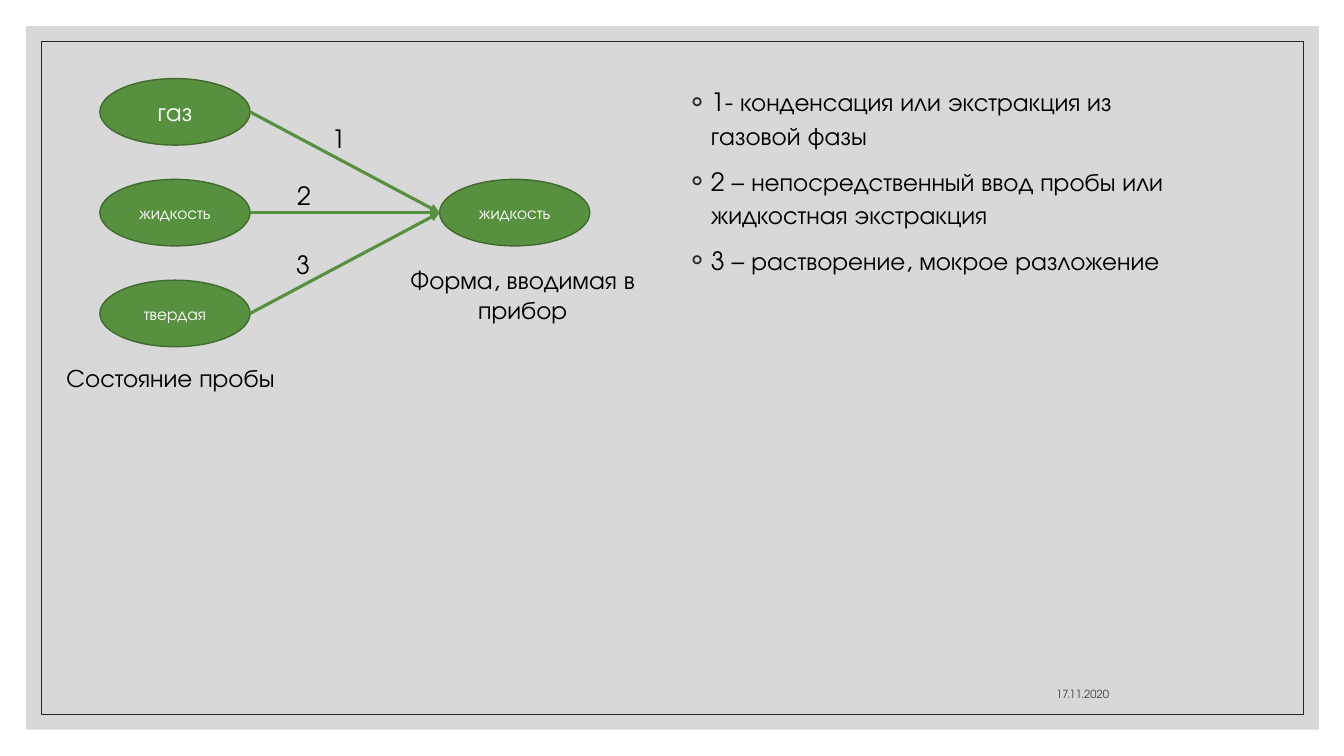
from dataclasses import dataclass

from lxml import etree
from pptx import Presentation
from pptx.dml.color import RGBColor
from pptx.enum.shapes import MSO_CONNECTOR as Connector, MSO_SHAPE as Preset
from pptx.enum.text import MSO_ANCHOR as Anchor, MSO_AUTO_SIZE as AutoSize, PP_ALIGN as Align
from pptx.oxml.ns import qn
from pptx.util import Emu, Pt

FONT = "TeX Gyre Adventor"
GREEN, DARK_GREEN = "57903F", "406B2F"
BLACK, WHITE, CHARCOAL, GREY = "000000", "FFFFFF", "262626", "404040"
OVAL_WIDTH, OVAL_HEIGHT = 149, 66
SAMPLE_LEFT, SAMPLE_TOP, SAMPLE_PITCH = 99, 78, 100
INPUT_LEFT, INPUT_TOP = 436, 178


@dataclass
class State:
    name: str
    left: int
    top: int
    size: int = 12

    @property
    def middle(self) -> int:
        return self.top + OVAL_HEIGHT // 2


@dataclass
class Label:
    text: str
    left: int
    top: int
    width: int = 34
    height: int = 40
    align: Align = Align.LEFT
    size: int = 18
    color: str = BLACK
    anchor: Anchor = Anchor.TOP


def px(value: int) -> Emu:
    """One px is a hundredth of an inch."""
    return Emu(value * 9144)


def rgb(color: str) -> RGBColor:
    return RGBColor.from_string(color)


def write(paragraph, text: str, *, size: int = 18, color: str = BLACK,
          align: Align = Align.LEFT) -> None:
    paragraph.alignment = align
    run = paragraph.add_run()
    run.text = text
    run.font.name = FONT
    run.font.size = Pt(size)
    run.font.color.rgb = rgb(color)


def add_shape(slide, preset: Preset, left: int, top: int, width: int, height: int, *,
              fill: str = "", line: str = "", weight: float = 1):
    shape = slide.shapes.add_shape(preset, px(left), px(top), px(width), px(height))
    shape.shadow.inherit = False
    if fill:
        shape.fill.solid()
        shape.fill.fore_color.rgb = rgb(fill)
    else:
        shape.fill.background()
    if line:
        shape.line.color.rgb = rgb(line)
        shape.line.width = Pt(weight)
    else:
        shape.line.fill.background()
    return shape


def add_state(slide, state: State) -> None:
    shape = add_shape(slide, Preset.OVAL, state.left, state.top, OVAL_WIDTH, OVAL_HEIGHT,
                      fill=GREEN, line=DARK_GREEN)
    shape.text_frame.vertical_anchor = Anchor.MIDDLE
    write(shape.text_frame.paragraphs[0], state.name, size=state.size, color=WHITE,
          align=Align.CENTER)


def add_label(slide, label: Label) -> None:
    box = slide.shapes.add_textbox(px(label.left), px(label.top), px(label.width),
                                   px(label.height))
    box.text_frame.word_wrap = True
    box.text_frame.vertical_anchor = label.anchor
    write(box.text_frame.paragraphs[0], label.text, size=label.size, color=label.color,
          align=label.align)


def add_arrow(slide, source: State, target: State) -> None:
    arrow = slide.shapes.add_connector(
        Connector.STRAIGHT, px(source.left + OVAL_WIDTH), px(source.middle),
        px(target.left), px(target.middle))
    arrow.line.color.rgb = rgb(GREEN)
    arrow.line.width = Pt(2.25)
    etree.SubElement(arrow.line._get_or_add_ln(), qn("a:tailEnd"), type="triangle")
    etree.SubElement(arrow._element.spPr, qn("a:effectLst"))


def add_bullet(paragraph) -> None:
    properties = paragraph._p.get_or_add_pPr()
    properties.set("marL", str(px(20)))
    properties.set("indent", str(-px(20)))
    color = etree.SubElement(properties, qn("a:buClr"))
    etree.SubElement(color, qn("a:srgbClr"), val=CHARCOAL)
    etree.SubElement(properties, qn("a:buFont"), typeface=FONT)
    etree.SubElement(properties, qn("a:buChar"), char="◦")


def fill_list(body, items: list[str]) -> None:
    body.left, body.top, body.width, body.height = px(675), px(78), px(510), px(410)
    frame = body.text_frame
    frame.auto_size = AutoSize.NONE
    for index, item in enumerate(items):
        paragraph = frame.add_paragraph() if index else frame.paragraphs[0]
        write(paragraph, item)
        paragraph.line_spacing = 1.1
        paragraph.space_before = Pt(9)
        add_bullet(paragraph)


SAMPLES = [
    State(name, SAMPLE_LEFT, SAMPLE_TOP + row * SAMPLE_PITCH, size)
    for row, (name, size) in enumerate([("газ", 18), ("жидкость", 12), ("твердая", 12)])
]
INPUT = State("жидкость", INPUT_LEFT, INPUT_TOP)
LABELS = [
    Label("Состояние пробы", 56, 355, 255),
    Label("Форма, вводимая в прибор", 391, 257, 255, 71, Align.CENTER),
    Label("1", 319, 117),
    Label("2", 285, 174),
    Label("3", 284, 242),
    Label("17.11.2020", 794, 660, 316, 40, Align.RIGHT, 8, GREY, Anchor.BOTTOM),
]
METHODS = [
    "1- конденсация или экстракция из газовой фазы",
    "2 – непосредственный ввод пробы или жидкостная экстракция",
    "3 – растворение, мокрое разложение",
]


def main() -> None:
    presentation = Presentation()
    presentation.slide_width, presentation.slide_height = px(1333), px(750)
    slide = presentation.slides.add_slide(presentation.slide_layouts[1])
    title, body = slide.placeholders
    title._element.getparent().remove(title._element)

    # Backdrop and frame, behind the list
    backdrop = add_shape(slide, Preset.RECTANGLE, 26, 26, 1282, 698, fill="BFBFBF")
    backdrop_color = backdrop._element.spPr.find(qn("a:solidFill"))[0]
    etree.SubElement(backdrop_color, qn("a:alpha"), val="60000")
    add_shape(slide, Preset.RECTANGLE, 41, 41, 1252, 668, line=CHARCOAL, weight=0.5)
    slide.shapes._spTree.append(body._element)

    # List of methods
    fill_list(body, METHODS)

    # Diagram
    for state in [*SAMPLES, INPUT]:
        add_state(slide, state)
    for sample in SAMPLES:
        add_arrow(slide, sample, INPUT)

    # Captions, arrow numbers and date
    for label in LABELS:
        add_label(slide, label)

    presentation.save("out.pptx")


if __name__ == "__main__":
    main()
